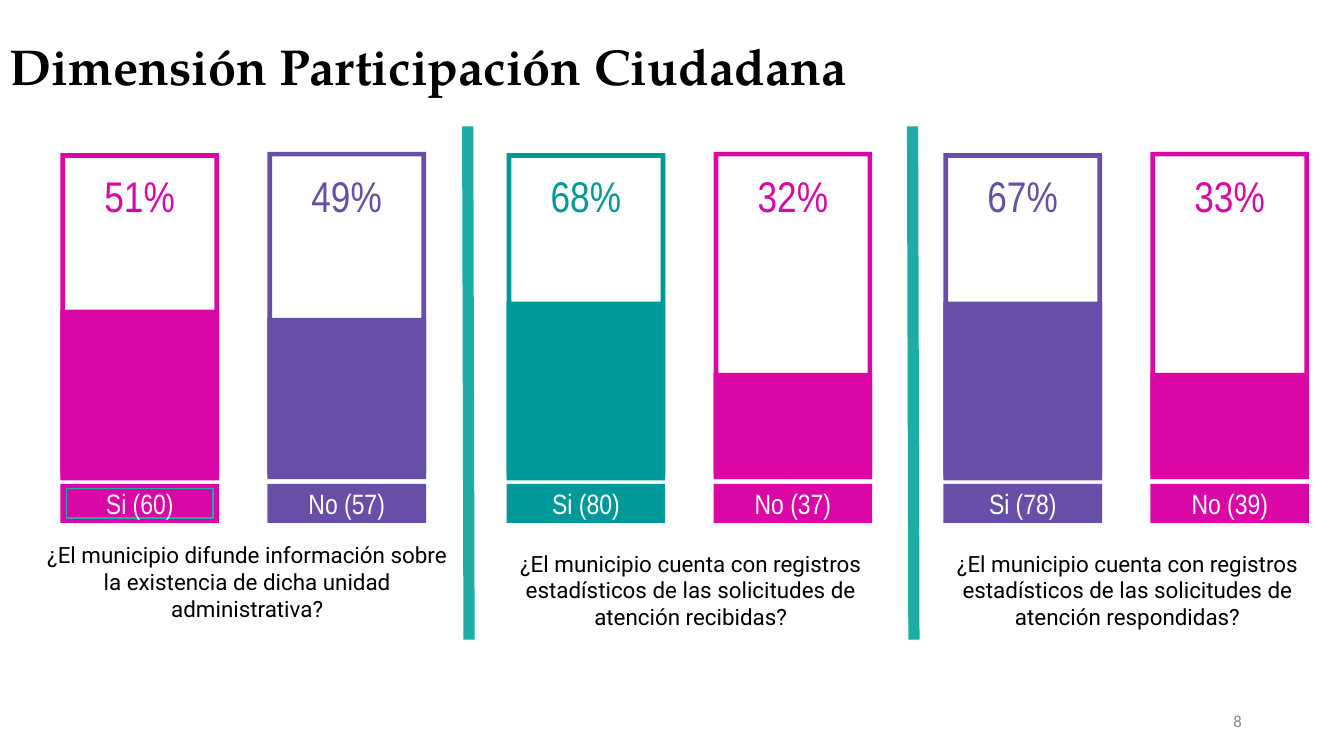
from dataclasses import dataclass

from lxml.etree import SubElement
from pptx import Presentation
from pptx.dml.color import RGBColor
from pptx.enum.shapes import MSO_CONNECTOR, MSO_SHAPE
from pptx.enum.text import MSO_ANCHOR, MSO_AUTO_SIZE, PP_ALIGN
from pptx.oxml.ns import qn
from pptx.util import Inches, Pt

# A 16:9 slide, divided into 1000 columns; rows are as high as columns are wide
SLIDE_WIDTH = Inches(10)
SLIDE_HEIGHT = SLIDE_WIDTH * 9 // 16
UNIT = SLIDE_WIDTH // 1000


@dataclass(frozen=True)
class Theme:
    magenta: str = "DB06A6"
    purple: str = "674EA7"
    teal: str = "009999"
    accent: str = "1DADA6"
    black: str = "000000"
    white: str = "FFFFFF"
    grey: str = "888888"
    title_font: str = "TeX Gyre Pagella"
    bar_font: str = "Arial Narrow"
    caption_font: str = "Roboto"
    number_font: str = "Calibri"
    title_size: int = 27
    percent_size: int = 23
    label_size: int = 15
    caption_size: int = 12
    number_size: int = 9


THEME = Theme()


@dataclass(frozen=True)
class Box:
    left: float
    top: float
    width: float
    height: float

    def inner(self, left, top, width, height):
        return Box(self.left + left, self.top + top, width, height)

    def inset(self, margin):
        return self.inner(margin, margin, self.width - 2 * margin, self.height - 2 * margin)

    def emu(self):
        return [int(UNIT * n) for n in (self.left, self.top, self.width, self.height)]

    def corners(self):
        left, top, width, height = self.emu()
        return [(left, top), (left, top + height), (left + width, top + height), (left + width, top)]


@dataclass(frozen=True)
class Bar:
    percent: str
    label: str
    color: str
    level: int
    outlined: bool = False


def paint(shape, color):
    shape.shadow.inherit = False
    shape.fill.solid()
    shape.fill.fore_color.rgb = RGBColor.from_string(color)
    shape.line.fill.background()


def write(shape, text, font, size, color, align=PP_ALIGN.CENTER,
          anchor=MSO_ANCHOR.MIDDLE, bold=False, vertical_inset=7):
    frame = shape.text_frame
    frame.word_wrap = True
    frame.auto_size = MSO_AUTO_SIZE.NONE
    frame.vertical_anchor = anchor
    frame.margin_left = frame.margin_right = UNIT * 7
    frame.margin_top = frame.margin_bottom = UNIT * vertical_inset
    paragraph = frame.paragraphs[0]
    paragraph.alignment = align
    run = paragraph.add_run()
    run.text = text
    run.font.name, run.font.size, run.font.bold = font, Pt(size), bold
    run.font.color.rgb = RGBColor.from_string(color)


def add_title(slide, box, text):
    title = slide.shapes.title
    title.left, title.top, title.width, title.height = box.emu()
    write(title, text, THEME.title_font, THEME.title_size, THEME.black,
          PP_ALIGN.JUSTIFY, MSO_ANCHOR.TOP, bold=True)


def add_bar(shapes, box, bar, lift):
    # Hollow frame: outer outline, then the opening wound the other way
    outer = box.inner(0, -lift, box.width, 240)
    points = outer.corners()
    opening = outer.inset(3.5).corners()[::-1]
    builder = shapes.build_freeform(*points[0])
    builder.add_line_segments(points[1:])
    builder.move_to(*opening[0])
    builder.add_line_segments(opening[1:])
    paint(builder.convert_to_shape(), bar.color)

    # Filled level, standing on the base of the bar
    level = box.inner(0, 243.5 - lift - bar.level, box.width, bar.level)
    paint(shapes.add_shape(MSO_SHAPE.RECTANGLE, *level.emu()), bar.color)

    percent = shapes.add_textbox(*box.inner(11, 8, 96, 46).emu())
    write(percent, bar.percent, THEME.bar_font, THEME.percent_size, bar.color)

    # Answer label on a coloured strip
    strip = box.inner(0, 246, box.width, 29)
    paint(shapes.add_shape(MSO_SHAPE.RECTANGLE, *strip.emu()), bar.color)
    label = shapes.add_textbox(*strip.inner(4.5, 3.5, 109, 22).emu())
    write(label, bar.label, THEME.bar_font, THEME.label_size, THEME.white)
    if bar.outlined:
        label.line.color.rgb = RGBColor.from_string(THEME.accent)
        label.line.width = Pt(0.75)


def add_panel(slide, box, bars):
    group = slide.shapes.add_group_shape()
    bar_width, pitch = 118, 154
    for index, bar in enumerate(bars):
        add_bar(group.shapes, box.inner(index * pitch, 0, bar_width, box.height), bar, lift=index)


def add_caption(slide, box, text):
    caption = slide.shapes.add_textbox(*box.emu())
    write(caption, text, THEME.caption_font, THEME.caption_size, THEME.black,
          anchor=MSO_ANCHOR.TOP)


def add_divider(slide, box):
    left, top, width, height = box.emu()
    line = slide.shapes.add_connector(MSO_CONNECTOR.STRAIGHT, left, top, left + width, top + height)
    line.line.color.rgb = RGBColor.from_string(THEME.accent)
    line.line.width = Pt(6)
    SubElement(line._element.spPr, qn("a:effectLst"))


def add_slide_number(slide, box, text):
    number = slide.shapes.add_textbox(*box.emu())
    write(number, text, THEME.number_font, THEME.number_size, THEME.grey,
          PP_ALIGN.RIGHT, vertical_inset=4)


# Panel left, caption left and top, bars, question
PANELS = [
    (45, 24, 396,
     [Bar("51%", "Si (60)", THEME.magenta, 127, outlined=True),
      Bar("49%", "No (57)", THEME.purple, 120)],
     "¿El municipio difunde información sobre la existencia de dicha unidad administrativa?"),
    (377, 354, 402,
     [Bar("68%", "Si (80)", THEME.teal, 133),
      Bar("32%", "No (37)", THEME.magenta, 79)],
     "¿El municipio cuenta con registros estadísticos de las solicitudes de atención recibidas?"),
    (702, 679, 402,
     [Bar("67%", "Si (78)", THEME.purple, 133),
      Bar("33%", "No (39)", THEME.magenta, 79)],
     "¿El municipio cuenta con registros estadísticos de las solicitudes de atención respondidas?"),
]


def main():
    presentation = Presentation()
    presentation.slide_width = SLIDE_WIDTH
    presentation.slide_height = SLIDE_HEIGHT
    slide = presentation.slides.add_slide(presentation.slide_layouts[5])

    add_slide_number(slide, Box(706, 521, 225, 30), "8")
    add_title(slide, Box(0, 19, 680, 61), "Dimensión Participación Ciudadana")
    for left, caption_left, caption_top, bars, question in PANELS:
        add_panel(slide, Box(left, 114, 272, 275), bars)
        add_caption(slide, Box(caption_left, caption_top, 320, 74), question)
    for left in (348, 679):
        add_divider(slide, Box(left, 94, 1, 382))

    presentation.save("out.pptx")


if __name__ == "__main__":
    main()
